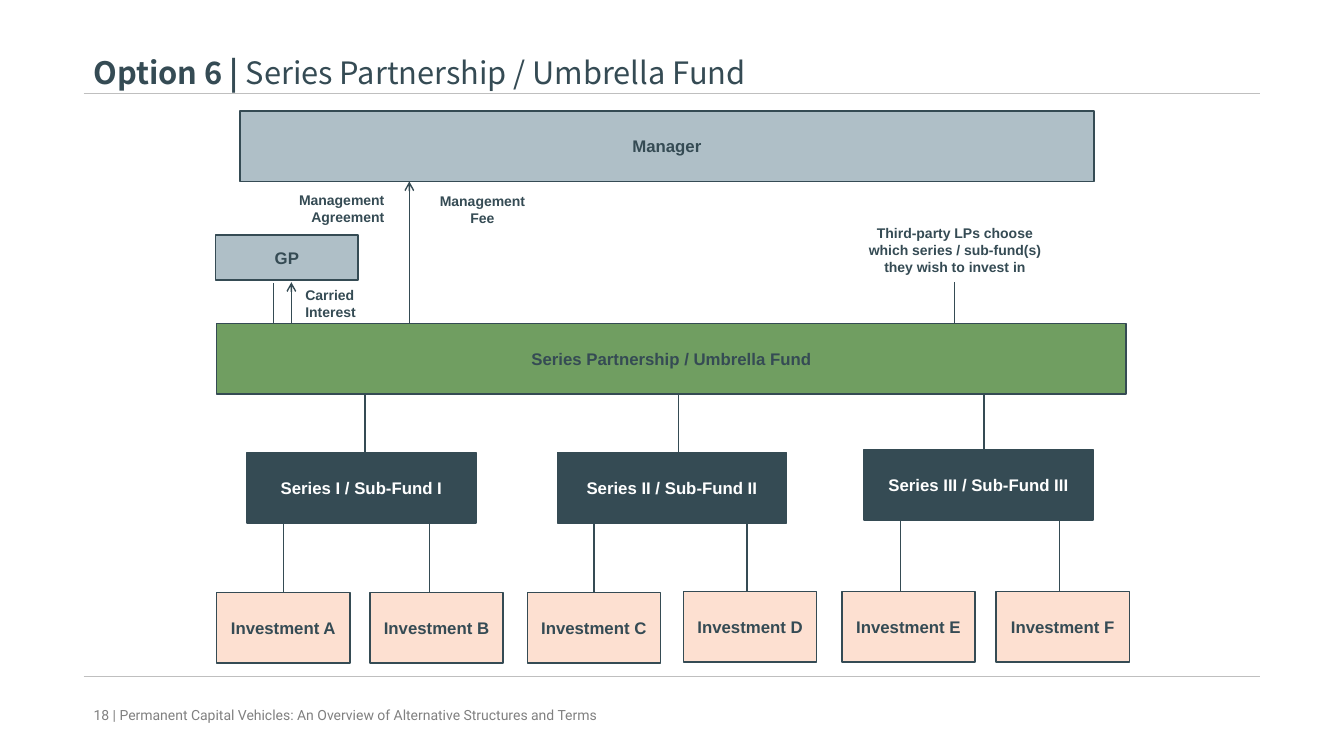
from lxml import etree
from pptx import Presentation
from pptx import util as u
from pptx.dml.color import RGBColor
from pptx.enum import shapes, text
from pptx.oxml import ns

PX = 9144  # EMU per px, 100 px to the inch

SLATE = RGBColor(0x35, 0x4B, 0x54)
MIST = RGBColor(0xAF, 0xBF, 0xC7)
GREEN = RGBColor(0x70, 0x9E, 0x61)
PEACH = RGBColor(0xFD, 0xE0, 0xD1)
WHITE = RGBColor(0xFF, 0xFF, 0xFF)
RULE_GREY = RGBColor(0xBF, 0xBF, 0xBF)
FOOTER_GREY = RGBColor(0x80, 0x80, 0x80)

LEFT, CENTER, RIGHT = text.PP_ALIGN.LEFT, text.PP_ALIGN.CENTER, text.PP_ALIGN.RIGHT
TOP, MIDDLE = text.MSO_ANCHOR.TOP, text.MSO_ANCHOR.MIDDLE

# Each series: label, box left and top, trunk x, then its investments
# (name, box left, box top, line x)
SERIES = [
    ("Series I / Sub-Fund I", 245, 449, 362,
     [("Investment A", 215, 588, 281), ("Investment B", 367, 588, 426)]),
    ("Series II / Sub-Fund II", 553, 449, 673,
     [("Investment C", 523, 588, 589), ("Investment D", 678, 587, 741)]),
    ("Series III / Sub-Fund III", 857, 446, 976,
     [("Investment E", 835, 587, 893), ("Investment F", 988, 587, 1051)]),
]


def px(*lengths):
    return [u.Emu(length * PX) for length in lengths]


def write(shape, *pieces, size=12, font="Arial", color=SLATE, bold=True,
          align=CENTER, anchor=MIDDLE):
    """Fill a shape with one paragraph; a piece is a string or (string, bold)."""
    frame = shape.text_frame
    frame.word_wrap = True
    frame.auto_size = text.MSO_AUTO_SIZE.NONE
    frame.vertical_anchor = anchor
    paragraph = frame.paragraphs[0]
    paragraph.alignment = align
    for piece in pieces:
        words, weight = (piece, bold) if isinstance(piece, str) else piece
        run = paragraph.add_run()
        run.text = words
        run.font.size = u.Pt(size)
        run.font.name = font
        run.font.bold = weight
        run.font.color.rgb = color


def add_box(slide, label, left, top, width, height, fill, color=SLATE):
    shape = slide.shapes.add_shape(
        shapes.MSO_SHAPE.RECTANGLE, *px(left, top, width, height))
    shape.shadow.inherit = False
    shape.fill.solid()
    shape.fill.fore_color.rgb = fill
    shape.line.color.rgb = SLATE
    shape.line.width = u.Pt(1)
    write(shape, label, color=color)


def add_label(slide, words, left, top, width, height, **style):
    shape = slide.shapes.add_textbox(*px(left, top, width, height))
    write(shape, words, **{"size": 10, "anchor": TOP, **style})


def add_line(slide, x1, y1, x2, y2, color=SLATE, width=1, arrow=False):
    line = slide.shapes.add_connector(
        shapes.MSO_CONNECTOR.STRAIGHT, *px(x1, y1, x2, y2))
    line.line.color.rgb = color
    line.line.width = u.Pt(width)
    if arrow:
        etree.SubElement(line.line._get_or_add_ln(), ns.qn("a:tailEnd"), type="arrow")
    etree.SubElement(line._element.spPr, ns.qn("a:effectLst"))


def add_title(slide):
    title = slide.shapes.title
    title.left, title.top, title.width, title.height = px(83, 48, 1167, 47)
    write(title, "Option 6 | ", ("Series Partnership / Umbrella Fund", False),
          size=22, font="Noto Sans CJK JP", align=LEFT)


def add_series(slide):
    # Lines first, so that the boxes cover their ends
    for _, _, _, trunk, investments in SERIES:
        add_line(slide, trunk, 499, trunk, 343)
        for _, _, _, x in investments:
            add_line(slide, x, 624, x, 460)
    for label, left, top, _, investments in SERIES:
        add_box(slide, label, left, top, 227, 70, SLATE, WHITE)
        for name, box_left, box_top, _ in investments:
            add_box(slide, name, box_left, box_top, 132, 70, PEACH)


def main():
    presentation = Presentation()
    presentation.slide_width, presentation.slide_height = px(1333, 750)
    slide = presentation.slides.add_slide(presentation.slide_layouts[5])

    # Page frame
    add_line(slide, 83, 93, 1250, 93, RULE_GREY)
    add_line(slide, 83, 671, 1250, 671, RULE_GREY, 0.75)
    add_title(slide)
    add_label(slide, "18 | Permanent Capital Vehicles: An Overview of "
              "Alternative Structures and Terms", 83, 689, 609, 40,
              font="Roboto", color=FOOTER_GREY, bold=False, align=LEFT, anchor=MIDDLE)

    # Lines above the fund
    add_line(slide, 271, 322, 271, 281)
    add_line(slide, 289, 322, 289, 280, arrow=True)
    add_line(slide, 947, 321, 947, 280)
    add_line(slide, 406, 367, 406, 180, arrow=True)

    # Series, investments and the boxes above them
    add_series(slide)
    add_box(slide, "Series Partnership / Umbrella Fund", 215, 321, 902, 70, GREEN)
    add_box(slide, "Manager", 238, 110, 847, 70, MIST)
    add_box(slide, "GP", 214, 233, 141, 45, MIST)

    # Labels beside the lines
    add_label(slide, "Management Agreement", 275, 185, 116, 44, align=RIGHT)
    add_label(slide, "Management Fee", 416, 186, 125, 44)
    add_label(slide, "Carried Interest", 293, 279, 102, 44, align=LEFT)
    add_label(slide, "Third-party LPs choose which series / sub-fund(s) "
              "they wish to invest in", 851, 218, 192, 61)

    presentation.save("out.pptx")


if __name__ == "__main__":
    main()
